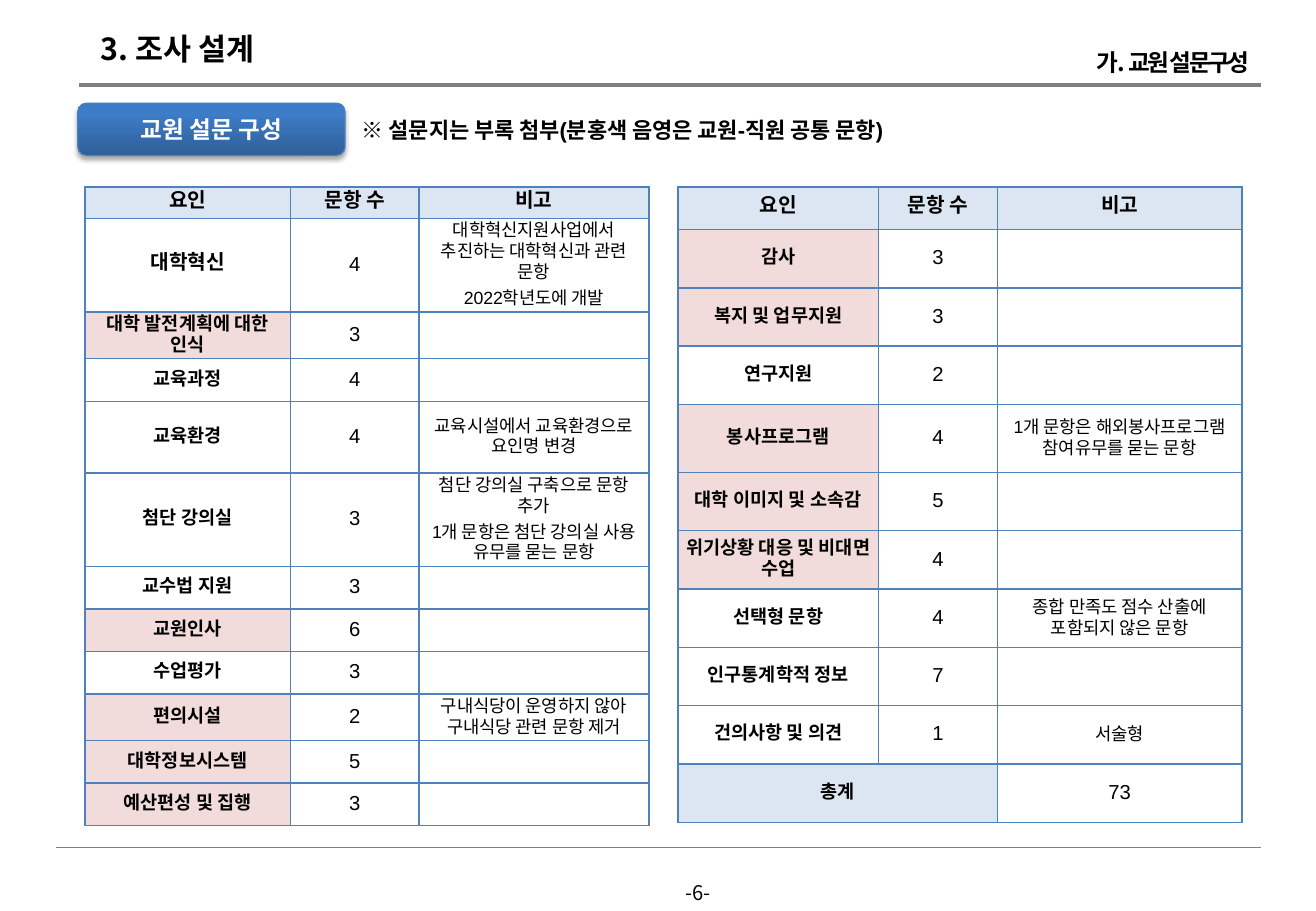
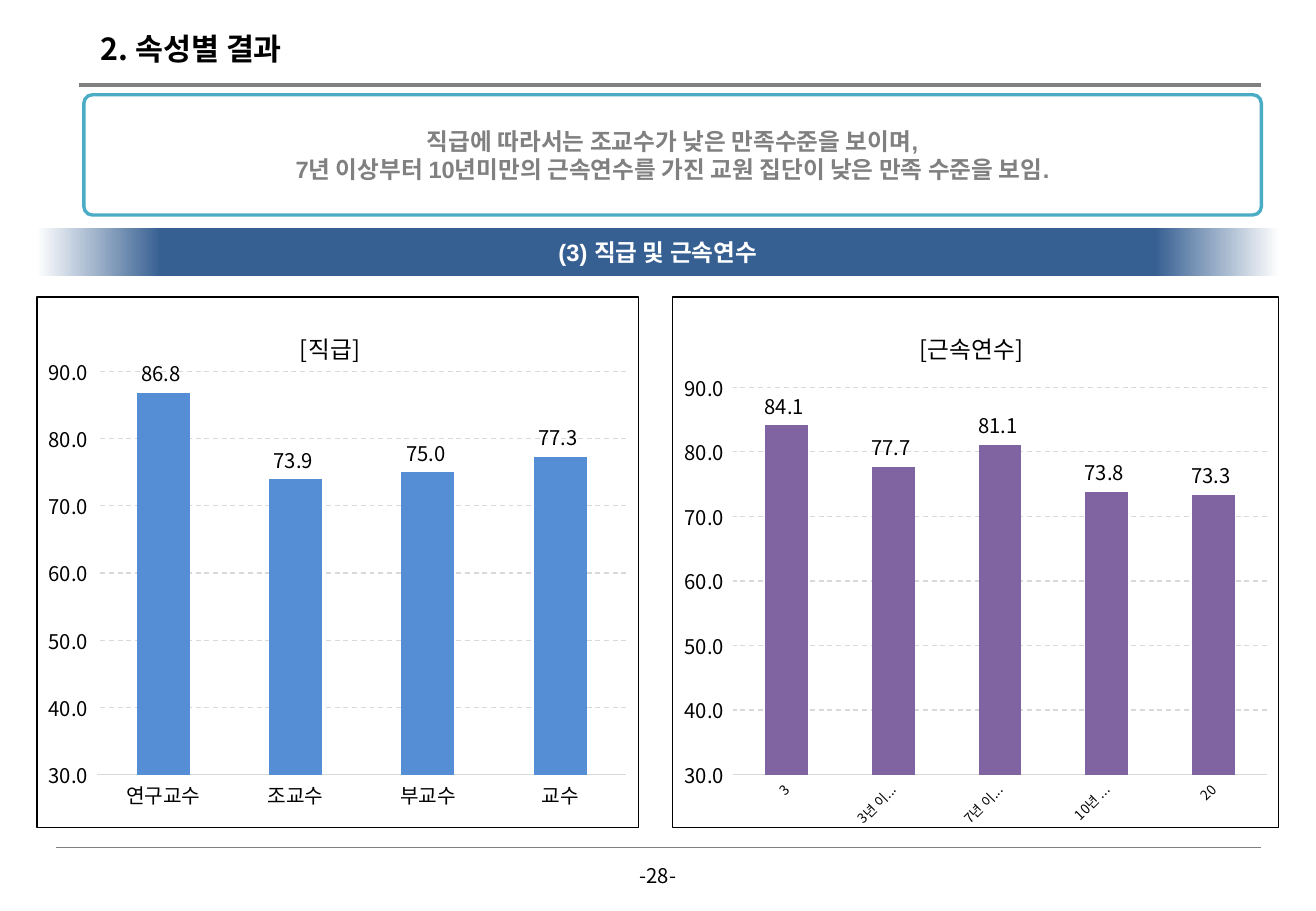
from lxml import etree
from pptx import Presentation
from pptx.chart.data import CategoryChartData
from pptx.dml.color import RGBColor
from pptx.enum.chart import XL_CHART_TYPE, XL_LABEL_POSITION, XL_TICK_MARK
from pptx.enum.dml import MSO_LINE
from pptx.enum.shapes import MSO_CONNECTOR, MSO_SHAPE
from pptx.enum.text import MSO_ANCHOR, PP_ALIGN
from pptx.oxml import parse_xml
from pptx.oxml.ns import nsdecls, qn
from pptx.util import Pt

LEFT, MID, RIGHT = PP_ALIGN.LEFT, PP_ALIGN.CENTER, PP_ALIGN.RIGHT
CENTER = MSO_ANCHOR.MIDDLE
COLUMN = XL_CHART_TYPE.COLUMN_CLUSTERED
OUT = XL_LABEL_POSITION.OUTSIDE_END
NONE = XL_TICK_MARK.NONE
DASH = MSO_LINE.DASH
LINE = MSO_CONNECTOR.STRAIGHT
RECT, ROUND = MSO_SHAPE.RECTANGLE, MSO_SHAPE.ROUNDED_RECTANGLE
PX = 9144


class Theme:
    noto, arial = "Noto Sans CJK KR", "Arial"
    black, white, gray = "000000", "FFFFFF", "808080"
    pale, pink, border = "DCE6F2", "F2DCDB", "4F81BD"
    teal, edge, grid = "4BACC6", "4B7EBC", "D9D9D9"
    blue, purple = "558ED5", "8064A2"
    badge = [(0, "2F5F99"), (80, "3D7CC7"), (100, "3A7CCB")]
    band = [(0, white), (10, "376092"), (90, "376092"), (100, white)]
    title = (noto, 18, black, True)
    side = (noto, 14, black, True)
    page = (noto, 12, black, False)
    label = (noto, 14, white, True)
    note = (arial, 13, black, True)
    lead = (arial, 14, gray, True)
    strip = (arial, 14, white, True)
    head = (arial, 12, black, True)
    name = (arial, 11, black, True)
    count = (arial, 12, black, False)
    remark = (arial, 10.5, black, False)
    chart = (noto, 14, black, False)
    tick = (noto, 12, black, False)
    small = (noto, 8, black, False)


KINDS = {
    "first": (None, Theme.head),
    "own": (None, Theme.name),
    "both": (Theme.pink, Theme.name),
    "sum": (Theme.pale, Theme.name),
}
HEADS = ["요인", "문항 수", "비고"]
TABLES = [
    {
        "left": 70, "cols": [169, 106, 189],
        "rows": [26, 76, 38, 35, 59, 77, 35, 35, 35, 38, 35, 35],
        "data": [
            ("first", "대학혁신", 4, "대학혁신지원사업에서 추진하는 대학혁신과 관련 문항\n2022학년도에 개발"),
            ("both", "대학 발전계획에 대한 인식", 3, ""),
            ("own", "교육과정", 4, ""),
            ("own", "교육환경", 4, "교육시설에서 교육환경으로 요인명 변경"),
            ("own", "첨단 강의실", 3, "첨단 강의실 구축으로 문항 추가\n1개 문항은 첨단 강의실 사용 유무를 묻는 문항"),
            ("own", "교수법 지원", 3, ""),
            ("both", "교원인사", 6, ""),
            ("own", "수업평가", 3, ""),
            ("both", "편의시설", 2, "구내식당이 운영하지 않아 구내식당 관련 문항 제거"),
            ("both", "대학정보시스템", 5, ""),
            ("both", "예산편성 및 집행", 3, ""),
        ],
    },
    {
        "left": 558, "cols": [165, 98, 201],
        "rows": [35, 48, 48, 48, 56, 48, 48, 48, 48, 48, 48],
        "data": [
            ("both", "감사", 3, ""),
            ("both", "복지 및 업무지원", 3, ""),
            ("own", "연구지원", 2, ""),
            ("both", "봉사프로그램", 4, "1개 문항은 해외봉사프로그램 참여유무를 묻는 문항"),
            ("both", "대학 이미지 및 소속감", 5, ""),
            ("both", "위기상황 대응 및 비대면 수업", 4, ""),
            ("own", "선택형 문항", 4, "종합 만족도 점수 산출에 포함되지 않은 문항"),
            ("own", "인구통계학적 정보", 7, ""),
            ("own", "건의사항 및 의견", 1, "서술형"),
            ("sum", "총계", None, 73),
        ],
    },
]
CHARTS = [
    {
        "box": (30, 244, 496, 438), "title": "[직급]", "spot": (0.43, 0.05),
        "plot": (0.1, 0.14, 0.88, 0.76), "color": Theme.blue, "cat": Theme.tick,
        "data": {"연구교수": 86.8, "조교수": 73.9, "부교수": 75.0, "교수": 77.3},
    },
    {
        "box": (553, 244, 500, 438), "title": "[근속연수]", "spot": (0.4, 0.05),
        "plot": (0.1, 0.17, 0.88, 0.73), "color": Theme.purple, "cat": Theme.small,
        "data": {"3년 미만": 84.1, "3년 이상~7년 미만": 77.7, "7년 이상~10년 미만": 81.1,
                 "10년 이상~20년 미만": 73.8, "20년 이상": 73.3},
    },
]
LEAD = "직급에 따라서는 조교수가 낮은 만족수준을 보이며,\n7년 이상부터 10년미만의 근속연수를 가진 교원 집단이 낮은 만족 수준을 보임."
FORMAT = "0.0_);[Red]\\(0.0\\)"


def rgb(code):
    return RGBColor.from_string(code)


def emu(box):
    return [n * PX for n in box]


def style(font, look):
    font.name, size, color, font.bold = look
    font.size = Pt(size)
    font.color.rgb = rgb(color)


def write(frame, text, look, align=MID, lead=None, gap=0, tight=0):
    frame.text = str(text)
    frame.word_wrap = True
    for i, para in enumerate(frame.paragraphs):
        para.alignment = align
        para.space_before = Pt(gap if i else 0)
        if lead:
            para.line_spacing = Pt(lead)
        style(para.font, look)
        props = para._p.pPr.find(qn("a:defRPr"))
        etree.SubElement(props, qn("a:ea")).set("typeface", Theme.noto)
        if tight:
            props.set("spc", str(tight))


def label(slide, box, text, look, align=LEFT, tight=0):
    frame = slide.shapes.add_textbox(*emu(box)).text_frame
    frame.vertical_anchor = CENTER
    write(frame, text, look, align, tight=tight)


def rule(slide, left, top, width):
    line = slide.shapes.add_connector(LINE, *emu((left, top, 1038, top)))
    line.line.color.rgb = rgb(Theme.gray)
    line.line.width = Pt(width)
    etree.SubElement(line._element.spPr, qn("a:effectLst"))


def block(slide, kind, box, text, look, lead=None):
    shape = slide.shapes.add_shape(kind, *emu(box))
    shape.shadow.inherit = False
    shape.line.fill.background()
    shape.text_frame.vertical_anchor = CENTER
    write(shape.text_frame, text, look, lead=lead)
    return shape


def outline(shape, color, width):
    shape.line.color.rgb = rgb(color)
    shape.line.width = Pt(width)


def blend(shape, stops, angle):
    marks = "".join(f'<a:gs pos="{at * 1000}"><a:srgbClr val="{color}"/></a:gs>' for at, color in stops)
    fill = parse_xml(f'<a:gradFill {nsdecls("a")} rotWithShape="1"><a:gsLst>{marks}</a:gsLst>'
                     f'<a:lin ang="{angle * 60000}" scaled="0"/></a:gradFill>')
    shape._element.spPr.find(qn("a:prstGeom")).addnext(fill)


def shade(shape):
    drop = parse_xml(f'<a:outerShdw {nsdecls("a")} blurRad="39370" dist="22860" dir="5400000" rotWithShape="0">'
                     '<a:srgbClr val="000000"><a:alpha val="35000"/></a:srgbClr></a:outerShdw>')
    shape._element.spPr.find(qn("a:effectLst")).append(drop)


def fill(cell, text, look, color):
    cell.margin_left = cell.margin_right = 4 * PX
    cell.margin_top = cell.margin_bottom = 2 * PX
    cell.vertical_anchor = CENTER
    write(cell.text_frame, text, look, lead=12.4, gap=3)
    if color:
        cell.fill.solid()
        cell.fill.fore_color.rgb = rgb(color)
    else:
        cell.fill.background()
    for i, side in enumerate("LRTB"):
        line = parse_xml(f'<a:ln{side} {nsdecls("a")} w="12700"><a:solidFill>'
                         f'<a:srgbClr val="{Theme.border}"/></a:solidFill></a:ln{side}>')
        cell._tc.tcPr.insert(i, line)


def grid(slide, spec):
    cols, rows = spec["cols"], spec["rows"]
    box = (spec["left"], 154, sum(cols), sum(rows))
    table = slide.shapes.add_table(len(rows), len(cols), *emu(box)).table
    table.first_row = table.horz_banding = False
    for col, width in zip(table.columns, cols):
        col.width = width * PX
    for row, height in zip(table.rows, rows):
        row.height = height * PX
    for i, text in enumerate(HEADS):
        fill(table.cell(0, i), text, Theme.head, Theme.pale)
    for r, (kind, name, count, note) in enumerate(spec["data"], 1):
        color, look = KINDS[kind]
        last = Theme.count if kind == "sum" else Theme.remark
        fill(table.cell(r, 0), name, look, color)
        fill(table.cell(r, 1), "" if count is None else count, Theme.count, None)
        fill(table.cell(r, 2), note, last, None)
        if count is None:
            table.cell(r, 0).merge(table.cell(r, 1))


def place(parent, index, spot, inner=False):
    old = parent.find(qn("c:layout"))
    if old is not None:
        parent.remove(old)
    target = '<c:layoutTarget val="inner"/>' if inner else ""
    modes = '<c:xMode val="edge"/><c:yMode val="edge"/>'
    sizes = "".join(f'<c:{key} val="{n}"/>' for key, n in zip("xywh", spot))
    parent.insert(index, parse_xml(f'<c:layout {nsdecls("c")}><c:manualLayout>{target}{modes}{sizes}'
                                   '</c:manualLayout></c:layout>'))


def bars(slide, spec):
    data = CategoryChartData()
    data.categories = list(spec["data"])
    data.add_series("Series 1", list(spec["data"].values()))
    chart = slide.shapes.add_chart(COLUMN, *emu(spec["box"]), data).chart
    style(chart.font, Theme.tick)
    chart.has_legend = False
    title = chart.chart_title
    title.text_frame.text = spec["title"]
    style(title.text_frame.paragraphs[0].font, Theme.chart)
    title.include_in_layout = False
    place(title._element, 1, spec["spot"])
    root = chart._chartSpace.find(qn("c:chart"))
    place(root.find(qn("c:plotArea")), 0, spec["plot"], True)
    root.addnext(parse_xml(f'<c:spPr {nsdecls("c", "a")}><a:noFill/><a:ln w="9525"><a:solidFill>'
                           f'<a:srgbClr val="{Theme.black}"/></a:solidFill></a:ln></c:spPr>'))

    cat, val = chart.category_axis, chart.value_axis
    for axis, look in ((cat, spec["cat"]), (val, Theme.tick)):
        axis.major_tick_mark = axis.minor_tick_mark = NONE
        style(axis.tick_labels.font, look)
    val.minimum_scale, val.maximum_scale, val.major_unit = 30, 90, 10
    val.format.line.fill.background()
    val.has_major_gridlines = True
    for line in (cat.format.line, val.major_gridlines.format.line):
        line.color.rgb = rgb(Theme.grid)
        line.width = Pt(0.75)
    val.major_gridlines.format.line.dash_style = DASH

    plot = chart.plots[0]
    plot.gap_width = 150
    plot.vary_by_categories = False
    bar = plot.series[0].format.fill
    bar.solid()
    bar.fore_color.rgb = rgb(spec["color"])
    plot.has_data_labels = True
    tags = plot.data_labels
    tags.show_value = True
    tags.position = OUT
    style(tags.font, Theme.tick)
    for item in (tags, val.tick_labels):
        item.number_format = FORMAT
        item.number_format_is_linked = False


def page(deck, title, number, spot):
    slide = deck.slides.add_slide(deck.slide_layouts[6])
    rule(slide, 65, 70, 2)
    rule(slide, 46, 698, 0.5)
    label(slide, (73, 20, 300, 40), title, Theme.title)
    label(slide, (*spot, 55, 30), number, Theme.page, MID)
    return slide


def survey(deck):
    slide = page(deck, "3. 조사 설계", "-6-", (547, 720))
    label(slide, (837, 34, 201, 34), "가. 교원 설문구성", Theme.side, RIGHT, -150)
    badge = block(slide, ROUND, (64, 85, 220, 43), "교원 설문 구성", Theme.label)
    blend(badge, Theme.badge, 270)
    outline(badge, Theme.edge, 0.75)
    shade(badge)
    label(slide, (288, 91, 502, 32), "※ 설문지는 부록 첨부(분홍색 음영은 교원-직원 공통 문항)", Theme.note)
    for spec in TABLES:
        grid(slide, spec)


def result(deck):
    slide = page(deck, "2. 속성별 결과", "-28-", (514, 706))
    lead = block(slide, ROUND, (69, 78, 969, 99), LEAD, Theme.lead, 16.6)
    lead.adjustments[0] = 0.07
    lead.fill.solid()
    lead.fill.fore_color.rgb = rgb(Theme.white)
    outline(lead, Theme.teal, 2)
    band = block(slide, RECT, (30, 188, 1023, 39), "(3) 직급 및 근속연수", Theme.strip)
    blend(band, Theme.band, 0)
    for spec in CHARTS:
        bars(slide, spec)


def main():
    deck = Presentation()
    deck.slide_width, deck.slide_height = emu((1083, 750))
    survey(deck)
    result(deck)
    deck.save("out.pptx")


if __name__ == "__main__":
    main()
